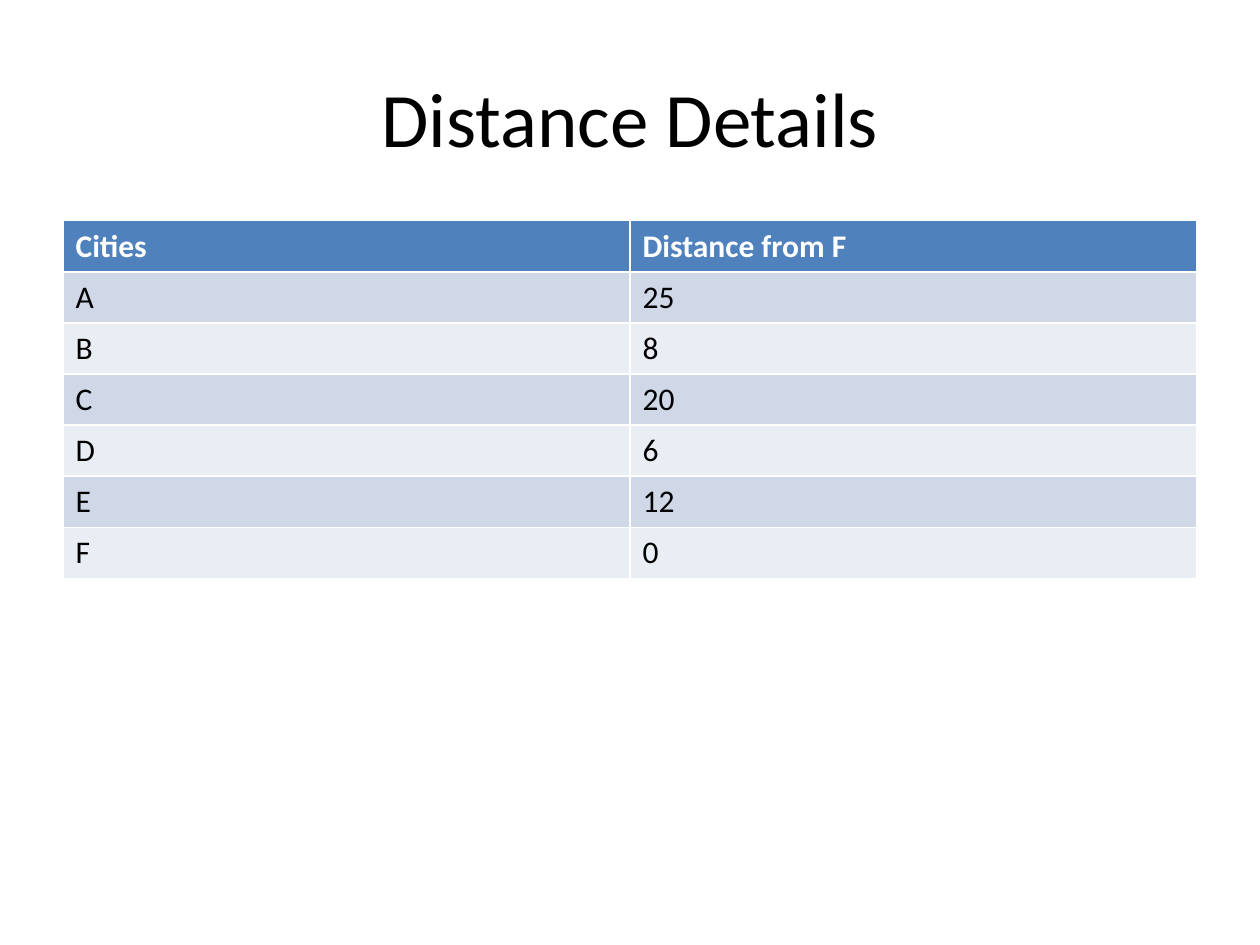
from pptx import Presentation
from pptx.dml.color import RGBColor
from pptx.enum.text import MSO_ANCHOR as Anchor, PP_ALIGN as Align
from pptx.util import Cm, Pt

BLACK = RGBColor(0x00, 0x00, 0x00)
WHITE = RGBColor(0xFF, 0xFF, 0xFF)
HEADER_BLUE = RGBColor(0x4F, 0x81, 0xBD)
BANDS = (RGBColor(0xE9, 0xED, 0xF4), RGBColor(0xD0, 0xD8, 0xE8))

TITLE_BOX = (Cm(1.27), Cm(0.76), Cm(22.86), Cm(3.18))
TABLE_BOX = (Cm(1.27), Cm(4.45), Cm(22.86), Cm(7.21))

TITLE_FONT = {"name": "Calibri", "size": Pt(44), "bold": False}
HEADER_FONT = {"name": "Calibri", "size": Pt(18), "bold": True}
BODY_FONT = {**HEADER_FONT, "bold": False}

DISTANCES = [
    ("Cities", "Distance from F"),
    ("A", "25"),
    ("B", "8"),
    ("C", "20"),
    ("D", "6"),
    ("E", "12"),
    ("F", "0"),
]


def write_text(frame, text, font_values, color, align):
    para = frame.paragraphs[0]
    para.alignment = align
    span = para.add_run()
    span.text = text
    for name, value in font_values.items():
        setattr(span.font, name, value)
    span.font.color.rgb = color


def place_title(page, box, text):
    title = page.shapes.title
    for name, value in zip(("left", "top", "width", "height"), box):
        setattr(title, name, value)
    title.text_frame.vertical_anchor = Anchor.MIDDLE
    write_text(title.text_frame, text, TITLE_FONT, BLACK, Align.CENTER)


def place_distance_table(page, box, records):
    table = page.shapes.add_table(len(records), len(records[0]), *box).table
    for row, record in enumerate(records):
        is_header = row == 0
        fill_color = HEADER_BLUE if is_header else BANDS[row % 2]
        font_values = HEADER_FONT if is_header else BODY_FONT
        text_color = WHITE if is_header else BLACK
        for column, text in enumerate(record):
            cell = table.cell(row, column)
            cell.fill.solid()
            cell.fill.fore_color.rgb = fill_color
            write_text(cell.text_frame, text, font_values, text_color, Align.LEFT)


def main():
    deck = Presentation()
    deck.slide_width, deck.slide_height = Cm(25.4), Cm(19.05)
    page = deck.slides.add_slide(deck.slide_layouts.get_by_name("Title Only"))
    place_title(page, TITLE_BOX, "Distance Details")
    place_distance_table(page, TABLE_BOX, DISTANCES)
    deck.save("out.pptx")


if __name__ == "__main__":
    main()
